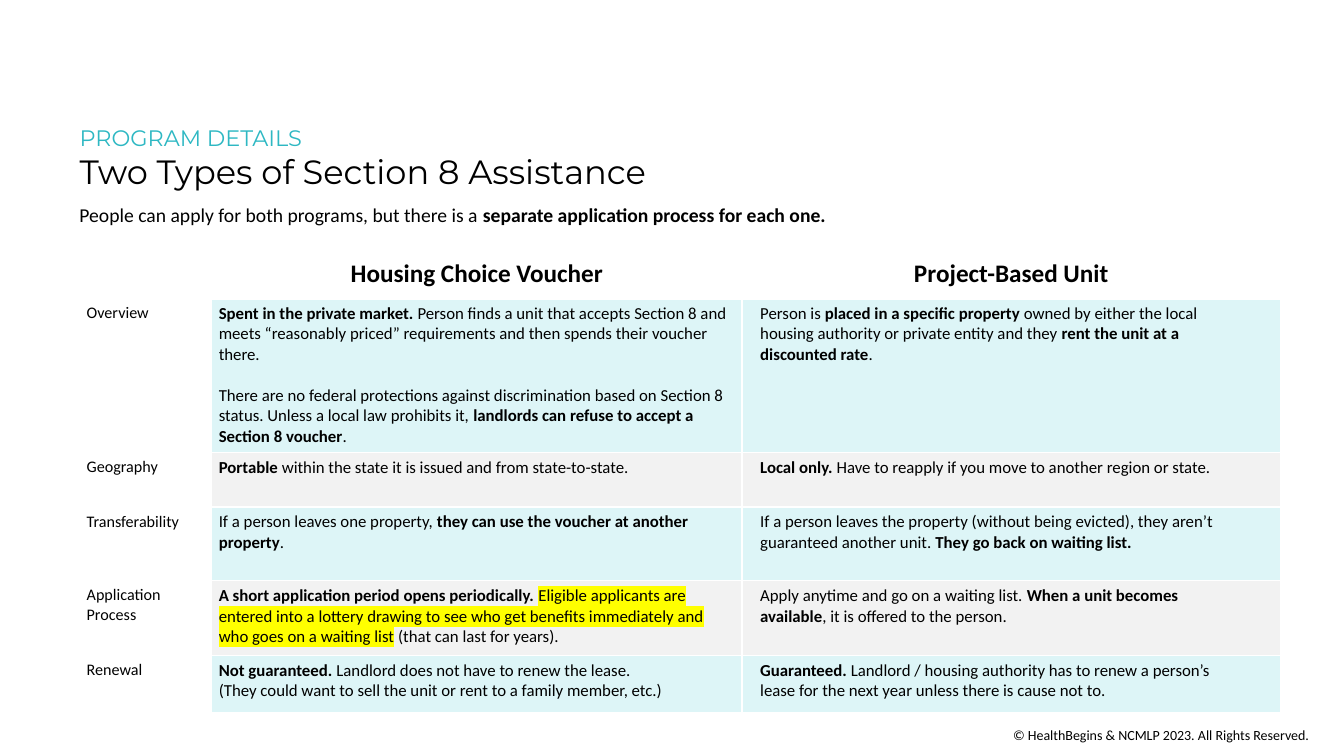
from typing import NamedTuple

from lxml.etree import SubElement
from pptx import Presentation
from pptx.dml.color import RGBColor
from pptx.enum.text import MSO_ANCHOR, PP_ALIGN
from pptx.oxml.ns import qn
from pptx.util import Emu, Pt

PX = 9144  # EMU per px, 100 px to the inch
COLORS = {
    "white": "FFFFFF",
    "black": "000000",
    "teal": "2EB8C3",
    "aqua": "DDF5F7",
    "grey": "F2F2F2",
    "yellow": "FFFF00",
}


class Span(NamedTuple):
    text: str
    bold: bool = False
    highlight: bool = False


class Style(NamedTuple):
    size: float
    face: str = "Calibri"
    color: str = "black"
    align: PP_ALIGN = PP_ALIGN.LEFT
    gap: float = 0  # points between paragraphs


class Topic(NamedTuple):
    label: str
    height: int
    voucher: list[list[Span]]
    unit: list[list[Span]]


class Box(NamedTuple):
    left: int
    top: int
    width: int
    height: int

    def emu(self) -> list[Emu]:
        return [px(length) for length in self]


def px(length: int) -> Emu:
    return Emu(length * PX)


def bold(text: str) -> Span:
    return Span(text, bold=True)


def add_span(paragraph, span: Span, style: Style) -> None:
    run = paragraph.add_run()
    run.text = span.text
    font_format = {"name": style.face, "size": Pt(style.size), "bold": span.bold}
    for attribute, value in font_format.items():
        setattr(run.font, attribute, value)
    run.font.color.rgb = RGBColor.from_string(COLORS[style.color])
    if span.highlight:
        properties = run.font._element
        marker = SubElement(properties, qn("a:highlight"))
        SubElement(marker, qn("a:srgbClr"), val=COLORS["yellow"])
        properties.find(qn("a:solidFill")).addnext(marker)


def write(frame, lines: list[list[Span]], style: Style) -> None:
    for index, spans in enumerate(lines):
        paragraph = frame.paragraphs[0] if index == 0 else frame.add_paragraph()
        paragraph.alignment = style.align
        if index:
            paragraph.space_before = Pt(style.gap)
        for span in spans:
            add_span(paragraph, span, style)


def add_note(slide, box: Box, lines: list[list[Span]], style: Style) -> None:
    frame = slide.shapes.add_textbox(*box.emu()).text_frame
    frame.word_wrap = True
    write(frame, lines, style)


def format_cell(cell, fill: str | None, left: int, bottom_px_points: int = 1) -> None:
    margins = {"margin_left": left, "margin_right": 7, "margin_top": 5, "margin_bottom": 5}
    for attribute, length in margins.items():
        setattr(cell, attribute, px(length))
    properties = cell._tc.get_or_add_tcPr()
    for side, points in {"L": 1, "R": 1, "T": 1, "B": bottom_px_points}.items():
        border = SubElement(properties, qn(f"a:ln{side}"), w=str(Pt(points)))
        paint = SubElement(border, qn("a:solidFill"))
        SubElement(paint, qn("a:srgbClr"), val=COLORS["white"])
    if fill:
        cell.fill.solid()
        cell.fill.fore_color.rgb = RGBColor.from_string(COLORS[fill])
    else:
        cell.fill.background()


COLUMN_WIDTHS = [131, 526, 534]
HEADINGS = ["", "Housing Choice Voucher", "Project-Based Unit"]
HEADING_HEIGHT = 48
TOPICS = [
    Topic("Overview", 153, [
        [bold("Spent in the private market."),
         Span(" Person finds a unit that accepts Section 8 and meets “reasonably priced” "
              "requirements and then spends their voucher there.")],
        [Span("There are no federal protections against discrimination based on Section 8 "
              "status. Unless a local law prohibits it, "),
         bold("landlords can refuse to accept a Section 8 voucher"), Span(".")],
    ], [
        [Span("Person is "), bold("placed in a specific property"),
         Span(" owned by either the local")],
        [Span("housing authority or private entity and they "), bold("rent the unit at a")],
        [bold("discounted rate"), Span(".")],
    ]),
    Topic("Geography", 54, [
        [bold("Portable "), Span("within the state it is issued and from state-to-state.")],
    ], [
        [bold("Local only. "),
         Span("Have to reapply if you move to another region or state.")],
    ]),
    Topic("Transferability", 73, [
        [Span("If a person leaves one property, "),
         bold("they can use the voucher at another property"), Span(".")],
    ], [
        [Span("If a person leaves the property (without being evicted), they aren’t")],
        [Span("guaranteed another unit. "), bold("They go back on waiting list.")],
    ]),
    Topic("Application Process", 74, [
        [bold("A short application period opens periodically. "),
         Span("Eligible applicants are entered into a lottery drawing to see who get benefits "
              "immediately and who goes on a waiting list", highlight=True),
         Span(" (that can last for years).")],
    ], [
        [Span("Apply anytime and go on a waiting list. "), bold("When a unit becomes")],
        [bold("available"), Span(", it is offered to the person.")],
    ]),
    Topic("Renewal", 57, [
        [bold("Not guaranteed. "), Span("Landlord does not have to renew the lease.")],
        [Span("(They could want to sell the unit or rent to a family member, etc.)")],
    ], [
        [bold("Guaranteed."),
         Span(" Landlord / housing authority has to renew a person’s")],
        [Span("lease for the next year unless there is cause not to.")],
    ]),
]


def add_title(slide) -> None:
    title = slide.shapes.title
    title.left, title.top, title.width, title.height = Box(69, 118, 613, 77).emu()
    title.text_frame.vertical_anchor = MSO_ANCHOR.TOP
    write(title.text_frame, [[]], Style(16))
    add_span(title.text_frame.paragraphs[0], Span("PROGRAM DETAILS"),
             Style(16, "Montserrat", "teal"))
    name = title.text_frame.add_paragraph()
    name.alignment = PP_ALIGN.LEFT
    add_span(name, Span("Two Types of Section 8 Assistance"), Style(24, "Montserrat"))


def add_comparison(slide) -> None:
    heights = [HEADING_HEIGHT] + [topic.height for topic in TOPICS]
    box = Box(79, 248, sum(COLUMN_WIDTHS), sum(heights))
    table = slide.shapes.add_table(len(heights), len(COLUMN_WIDTHS), *box.emu()).table
    table.first_row = table.horz_banding = False
    for column, width in zip(table.columns, COLUMN_WIDTHS):
        column.width = px(width)
    for row, height in zip(table.rows, heights):
        row.height = px(height)

    # Heading row
    for index, heading in enumerate(HEADINGS):
        cell = table.cell(0, index)
        format_cell(cell, None, 7, 3)
        cell.vertical_anchor = MSO_ANCHOR.MIDDLE
        if heading:
            write(cell.text_frame, [[bold(heading)]], Style(18, align=PP_ALIGN.CENTER))

    # One row per topic, in alternating tints
    for number, topic in enumerate(TOPICS, start=1):
        tint = "aqua" if number % 2 else "grey"
        voucher_gap = 14.6 if topic.label == "Overview" else 0
        columns = [
            ([[Span(topic.label)]], None, 7, Style(11.5)),
            (topic.voucher, tint, 7, Style(12, gap=voucher_gap)),
            (topic.unit, tint, 18, Style(12)),
        ]
        for index, (lines, fill, left, style) in enumerate(columns):
            cell = table.cell(number, index)
            format_cell(cell, fill, left)
            write(cell.text_frame, lines, style)


def main() -> None:
    deck = Presentation()
    deck.slide_width, deck.slide_height = px(1333), px(750)
    slide = deck.slides.add_slide(deck.slide_layouts[5])
    add_note(slide, Box(947, 716, 361, 27),
             [[Span("© HealthBegins & NCMLP 2023. All Rights Reserved.")]],
             Style(10, align=PP_ALIGN.RIGHT))
    add_title(slide)
    add_note(slide, Box(69, 196, 887, 34),
             [[Span("People can apply for both programs, but there is a "),
               bold("separate application process for each one.")]], Style(14))
    add_comparison(slide)
    deck.save("out.pptx")


if __name__ == "__main__":
    main()
